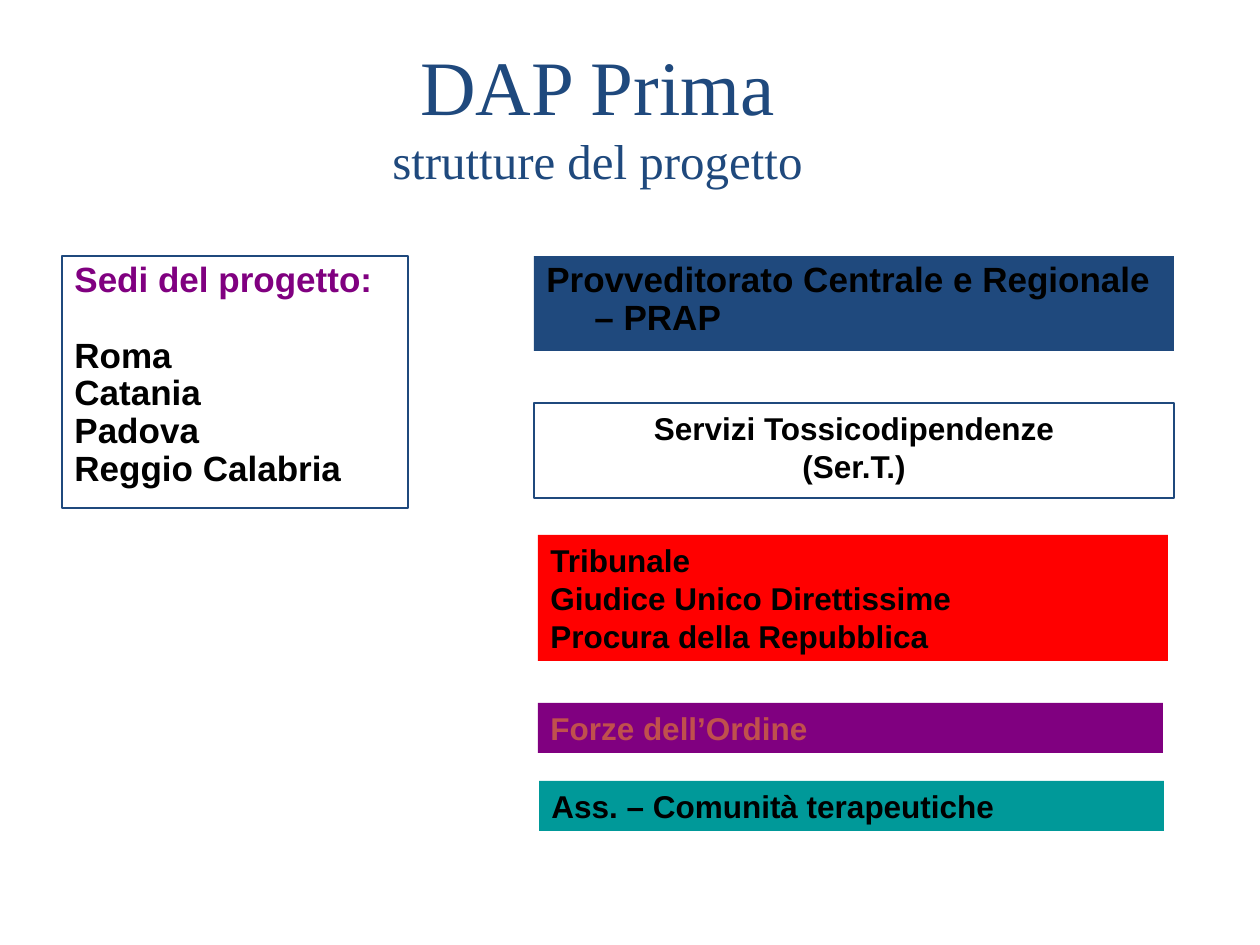
from dataclasses import dataclass

from pptx import Presentation
from pptx.dml.color import RGBColor
from pptx.enum import shapes, text
from pptx.util import Pt

EMU_PER_PX = 914400 / 126
NAVY, PURPLE, BLACK = "1F497D", "800080", "000000"
HANGING = 48


@dataclass
class Panel:
    left: int
    top: int
    width: int
    height: int
    lines: list[str]
    size: int = 18
    fill: str | None = None
    line: str | None = None
    color: str = BLACK
    centered: bool = False
    hanging: bool = False
    spacing: float = 1.0
    grow: bool = False


PANELS = [
    Panel(62, 256, 346, 252,
          ["Sedi del progetto:", "Roma", "Catania", "Padova", "Reggio Calabria"],
          size=20, line=NAVY, hanging=True, spacing=0.9),
    Panel(534, 256, 640, 95, ["Provveditorato Centrale e Regionale – PRAP"],
          size=20, fill=NAVY, hanging=True, spacing=0.9),
    Panel(534, 403, 640, 95, ["Servizi Tossicodipendenze", "(Ser.T.)"],
          fill="FFFFFF", line=NAVY, centered=True, hanging=True),
    Panel(538, 535, 630, 126,
          ["Tribunale", "Giudice Unico Direttissime", "Procura della Repubblica"],
          fill="FF0000", grow=True),
    Panel(538, 703, 625, 50, ["Forze dell’Ordine"],
          fill=PURPLE, color="C0504D", grow=True),
    Panel(539, 781, 625, 50, ["Ass. – Comunità terapeutiche"],
          fill="009999", grow=True),
]


def px(length: int) -> int:
    return round(length * EMU_PER_PX)


def rgb(value: str) -> RGBColor:
    return RGBColor.from_string(value)


def set_font(font, name: str, size: int, color: str, bold: bool = False) -> None:
    font.name, font.size, font.bold = name, Pt(size), bold
    font.color.rgb = rgb(color)


def draw_title(page) -> None:
    box = page.shapes.add_textbox(px(62), px(35), px(1071), px(158))
    frame = box.text_frame
    frame.word_wrap = True
    frame.vertical_anchor = text.MSO_ANCHOR.MIDDLE
    para = frame.paragraphs[0]
    para.alignment = text.PP_ALIGN.CENTER
    heading = para.add_run()
    heading.text = "DAP Prima"
    set_font(heading.font, "Times New Roman", 44, NAVY)
    para.add_line_break()
    subtitle = para.add_run()
    subtitle.text = "strutture del progetto"
    set_font(subtitle.font, "Times New Roman", 28, NAVY)


def draw_panel(page, panel: Panel):
    box = page.shapes.add_shape(shapes.MSO_SHAPE.RECTANGLE, px(panel.left),
                                px(panel.top), px(panel.width), px(panel.height))
    box.shadow.inherit = False
    if panel.fill:
        box.fill.solid()
        box.fill.fore_color.rgb = rgb(panel.fill)
    else:
        box.fill.background()
    if panel.line:
        box.line.color.rgb = rgb(panel.line)
        box.line.width = Pt(0.75)
    else:
        box.line.fill.background()

    frame = box.text_frame
    frame.word_wrap = True
    frame.vertical_anchor = text.MSO_ANCHOR.TOP
    if panel.grow:
        frame.auto_size = text.MSO_AUTO_SIZE.SHAPE_TO_FIT_TEXT
    for index, line in enumerate(panel.lines):
        para = frame.add_paragraph() if index else frame.paragraphs[0]
        para.text = line
        para.alignment = (text.PP_ALIGN.CENTER if panel.centered
                          else text.PP_ALIGN.LEFT)
        para.line_spacing = panel.spacing
        set_font(para.font, "Arial", panel.size, panel.color, bold=True)
        if panel.hanging:
            properties = para._p.get_or_add_pPr()
            properties.set("marL", str(px(HANGING)))
            properties.set("indent", str(-px(HANGING)))
    return box


def main() -> None:
    deck = Presentation()
    deck.slide_width, deck.slide_height = px(1260), px(945)
    page = deck.slides.add_slide(deck.slide_layouts[6])

    draw_title(page)
    boxes = [draw_panel(page, panel) for panel in PANELS]

    # The heading of the list of sites stands apart from the names
    heading = boxes[0].text_frame.paragraphs[0]
    heading.font.color.rgb = rgb(PURPLE)
    heading.space_after = Pt(21.6)

    deck.save("out.pptx")


if __name__ == "__main__":
    main()
